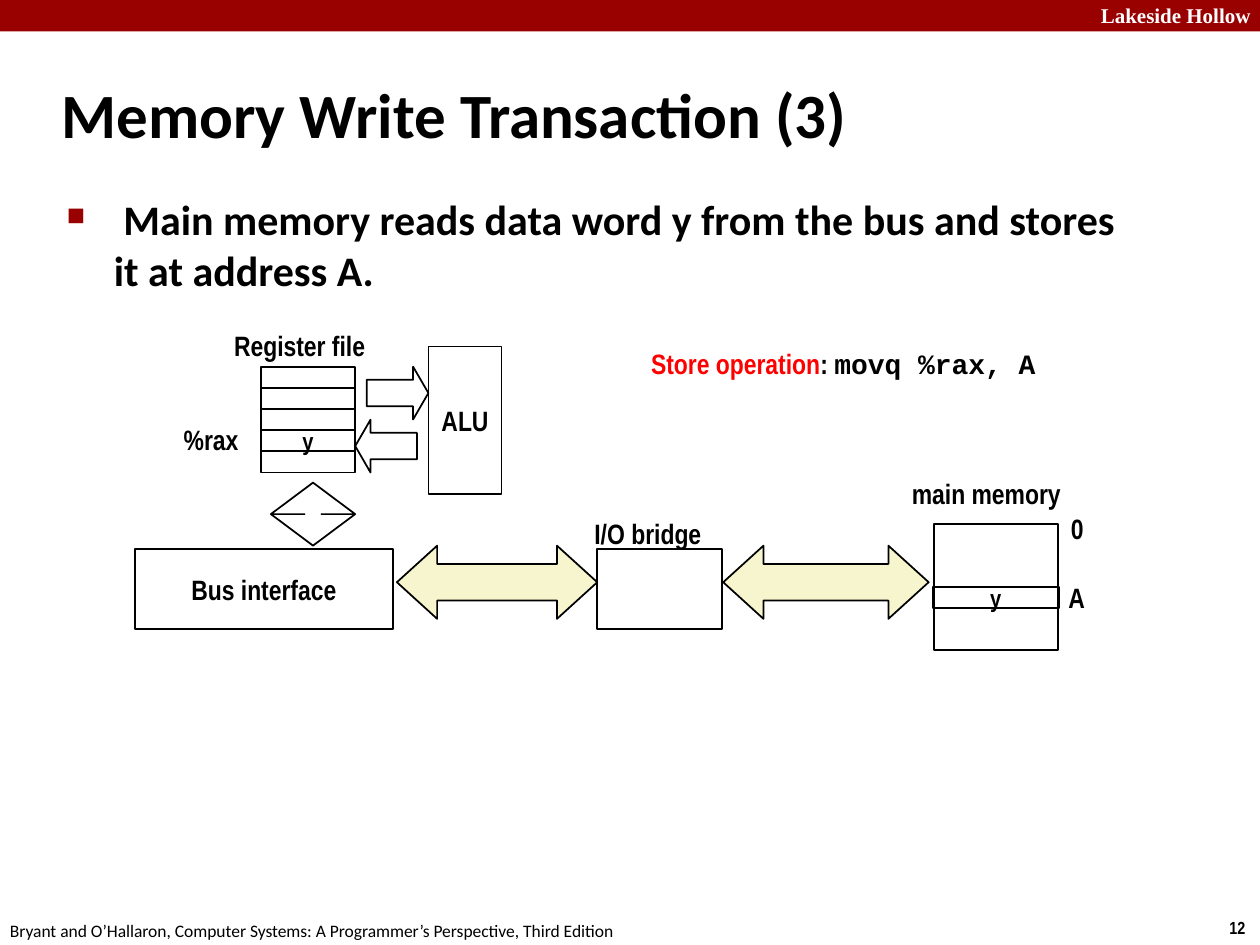
from lxml import etree
from pptx import Presentation, util as u
from pptx.dml.color import RGBColor
from pptx.enum import shapes, text
from pptx.oxml.ns import qn

BLACK, WHITE, CRIMSON, RED, CREAM = "000000", "FFFFFF", "990000", "FF0000", "F7F5CD"
NARROW, SANS, SERIF, MONO = "Arial Narrow", "Calibri", "Times New Roman", "Courier New"
KIND = shapes.MSO_SHAPE
MIDDLE = text.MSO_ANCHOR.MIDDLE
CENTER = text.PP_ALIGN.CENTER


def rgb(value):
    return RGBColor.from_string(value)


def add_run(p, words, size=16, font=NARROW, color=BLACK, bold=True):
    r = p.add_run()
    r.text = words
    r.font.size = u.Pt(size)
    r.font.name = font
    r.font.bold = bold
    r.font.color.rgb = rgb(color)


def add_text(slide, box, *runs, wrap=False, anchor=text.MSO_ANCHOR.TOP):
    """Add a one-paragraph text box; each run is (words, style dict)."""
    tf = slide.shapes.add_textbox(*map(u.Pt, box)).text_frame
    tf.word_wrap = wrap
    tf.vertical_anchor = anchor
    p = tf.paragraphs[0]
    for words, style in runs:
        add_run(p, words, **style)
    return p


def add_label(slide, words, left, top, width):
    add_text(slide, (left, top, width, 26.6), (words, {}), anchor=MIDDLE)


def add_figure(slide, kind, box, fill=None, line=BLACK, adjust=(), words="", size=16):
    """Add a preset shape, hollow unless a fill is given."""
    sp = slide.shapes.add_shape(kind, *map(u.Pt, box))
    sp.shadow.inherit = False
    for i, value in enumerate(adjust):
        sp.adjustments[i] = value
    if fill:
        sp.fill.solid()
        sp.fill.fore_color.rgb = rgb(fill)
    else:
        sp.fill.background()
    if line:
        sp.line.color.rgb = rgb(line)
        sp.line.width = u.Pt(1)
    else:
        sp.line.fill.background()
    if words:
        tf = sp.text_frame
        tf.word_wrap = False
        tf.vertical_anchor = MIDDLE
        p = tf.paragraphs[0]
        p.alignment = CENTER
        add_run(p, words, size)


def set_bullet(p, char, color, percent, indent):
    pPr = p._p.get_or_add_pPr()
    pPr.set("marL", str(u.Pt(indent)))
    pPr.set("indent", str(-u.Pt(indent)))
    clr = etree.SubElement(pPr, qn("a:buClr"))
    etree.SubElement(clr, qn("a:srgbClr"), val=color)
    etree.SubElement(pPr, qn("a:buSzPct"), val=str(percent * 1000))
    etree.SubElement(pPr, qn("a:buChar"), char=char)


def add_frame(slide):
    """Add the top bar, page number, footer, title and bullet."""
    add_figure(slide, KIND.RECTANGLE, (0, 0, 720, 18), CRIMSON, None)
    add_text(slide, (622, -2, 103, 21.6),
             ("Lakeside Hollow", dict(size=12, font=SERIF, color=WHITE)))
    add_text(slide, (695.5, 520.5, 24.5, 19.4), ("12", dict(size=10)))
    add_text(slide, (-1.4, 522, 366, 19.4),
             ("Bryant and O’Hallaron, Computer Systems: A Programmer’s Perspective, Third Edition",
              dict(size=10, font=SANS, bold=False)))
    add_text(slide, (28, 34.6, 597.6, 59.8),
             ("Memory Write Transaction (3)", dict(size=36, font=SANS)),
             wrap=True, anchor=MIDDLE)
    p = add_text(slide, (31, 107.3, 622, 391.7),
                 (" Main memory reads data word y from the bus and stores it at address A.",
                  dict(size=24, font=SANS)), wrap=True)
    set_bullet(p, "■", CRIMSON, 60, 27)


def add_processor(slide):
    row_height = 12.1
    for i, value in enumerate(("", "", "", "y", "")):
        add_figure(slide, KIND.RECTANGLE, (149, 209.5 + i * row_height, 54, row_height),
                   words=value, size=14)
    add_figure(slide, KIND.RIGHT_ARROW, (209.5, 209.5, 35.3, 30.2), adjust=(0.5, 0.29))
    add_figure(slide, KIND.LEFT_ARROW, (203, 239.8, 35.3, 30.2), adjust=(0.5, 0.29))
    add_figure(slide, KIND.RECTANGLE, (244.8, 198, 41.8, 84.2), words="ALU")
    add_figure(slide, KIND.UP_DOWN_ARROW, (154.8, 275.8, 48.2, 36), adjust=(0.5, 0.2))
    add_figure(slide, KIND.RECTANGLE, (77, 313.9, 147.6, 45.4), WHITE, words="Bus interface")
    add_label(slide, "Register file", 126.7, 184.3, 90.7)
    add_label(slide, "%rax", 97.9, 237.6, 46)


def add_bus_and_memory(slide):
    add_figure(slide, KIND.RECTANGLE, (533.5, 299.5, 71.3, 72))
    add_figure(slide, KIND.RECTANGLE, (341.3, 313.9, 71.3, 45.4))
    for left, width in ((226.8, 114.5), (413.3, 117.4)):
        add_figure(slide, KIND.LEFT_RIGHT_ARROW, (left, 311.8, width, 41.8), CREAM,
                   adjust=(0.5, 0.55))
    add_figure(slide, KIND.RECTANGLE, (533, 335.5, 72, 12.1), words="y", size=14)
    add_label(slide, "I/O bridge", 332.6, 291.6, 89.3)
    add_label(slide, "main memory", 514, 268.6, 118.8)
    add_label(slide, "0", 604.8, 288.7, 23)
    add_label(slide, "A", 603.4, 328.3, 25.9)


def main():
    prs = Presentation()
    prs.slide_width, prs.slide_height = u.Pt(720), u.Pt(540)
    slide = prs.slides.add_slide(prs.slide_layouts[6])
    add_frame(slide)
    add_processor(slide)
    add_bus_and_memory(slide)
    add_text(slide, (365, 194.4, 237.6, 46), ("Store operation", dict(color=RED)),
             (": ", {}), ("movq %rax, A", dict(font=MONO)))
    prs.save("out.pptx")


if __name__ == "__main__":
    main()
